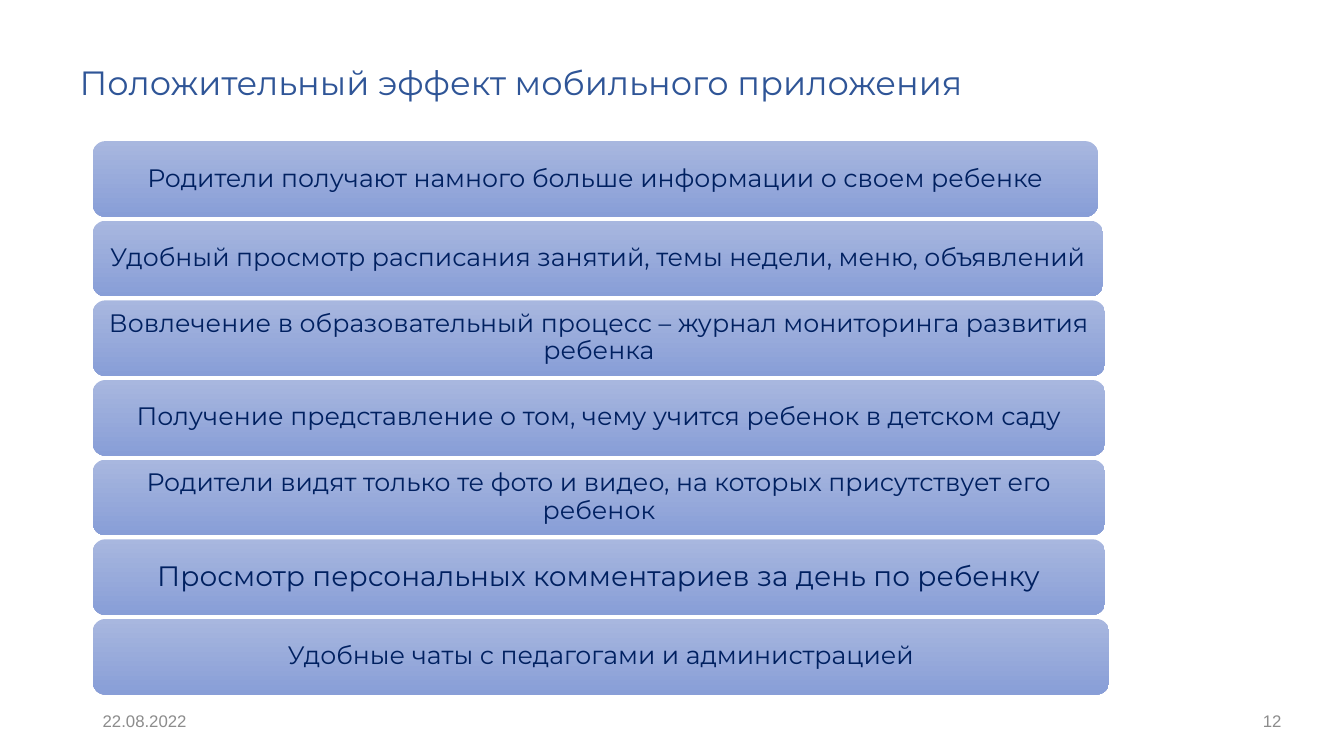
import pptx
import pptx.util
import pptx.dml.color
import pptx.enum.shapes
import pptx.enum.text

Inches = pptx.util.Inches
RGBColor = pptx.dml.color.RGBColor
ALIGN = pptx.enum.text.PP_ALIGN
ANCHOR = pptx.enum.text.MSO_ANCHOR

TITLE = "Положительный эффект мобильного приложения"
BENEFITS = [
    ("Родители получают намного больше информации о своем ребенке", 9.97, 18),
    ("Удобный просмотр расписания занятий, темы недели, меню, объявлений", 10.02, 18),
    ("Вовлечение в образовательный процесс – журнал мониторинга развития ребенка", 10.04, 18),
    ("Получение представление о том, чему учится ребенок в детском саду", 10.04, 18),
    ("Родители видят только те фото и видео, на которых присутствует его ребенок", 10.04, 18),
    ("Просмотр персональных комментариев за день по ребенку", 10.04, 20),
    ("Удобные чаты с педагогами и администрацией", 10.08, 18),
]
FOOTERS = [("22.08.2022", 0.92, ALIGN.LEFT), ("12", 9.81, ALIGN.RIGHT)]

TITLE_BLUE = RGBColor(0x2F, 0x55, 0x97)
NAVY = RGBColor(0x00, 0x20, 0x60)
GREY = RGBColor(0x8C, 0x8C, 0x8C)
BAR_COLORS = [RGBColor(0xA8, 0xB7, 0xDF), RGBColor(0x88, 0x9E, 0xD7)]

LEFT, TOP, BAR_HEIGHT, ROW_PITCH = 0.92, 1.4, 0.75, 0.79


def write(sp, text, size, color, font="Montserrat", align=ALIGN.LEFT,
          anchor=ANCHOR.MIDDLE, spacing=1.0, margins=(0.1, 0.05)):
    tf = sp.text_frame
    tf.word_wrap = True
    tf.auto_size = pptx.enum.text.MSO_AUTO_SIZE.NONE
    tf.vertical_anchor = anchor
    tf.margin_left = tf.margin_right = Inches(margins[0])
    tf.margin_top = tf.margin_bottom = Inches(margins[1])
    p = tf.paragraphs[0]
    p.alignment = align
    p.line_spacing = spacing
    r = p.add_run()
    r.text = text
    r.font.name = font
    r.font.size = pptx.util.Pt(size)
    r.font.color.rgb = color


def add_bar(s, row, text, width, size):
    sp = s.shapes.add_shape(
        pptx.enum.shapes.MSO_SHAPE.ROUNDED_RECTANGLE,
        Inches(LEFT), Inches(TOP + row * ROW_PITCH), Inches(width), Inches(BAR_HEIGHT))
    sp.shadow.inherit = False
    sp.line.fill.background()
    sp.fill.gradient()
    sp.fill.gradient_angle = 270
    for stop, color in zip(sp.fill.gradient_stops, BAR_COLORS):
        stop.color.rgb = color
    write(sp, text, size, NAVY, align=ALIGN.CENTER, spacing=0.9, margins=(0.03, 0))


def main():
    prs = pptx.Presentation()
    prs.slide_width, prs.slide_height = Inches(13.33), Inches(7.5)
    s = prs.slides.add_slide(prs.slide_layouts[5])

    title = s.shapes.title
    title.left, title.top = Inches(0.69), Inches(0.56)
    title.width, title.height = Inches(9.9), Inches(0.5)
    write(title, TITLE, 24, TITLE_BLUE, anchor=ANCHOR.TOP)

    for row, (text, width, size) in enumerate(BENEFITS):
        add_bar(s, row, text, width, size)

    for text, left, align in FOOTERS:
        box = s.shapes.add_textbox(Inches(left), Inches(6.95), Inches(3), Inches(0.4))
        write(box, text, 12, GREY, font="Arial", align=align)

    prs.save("out.pptx")


if __name__ == "__main__":
    main()
